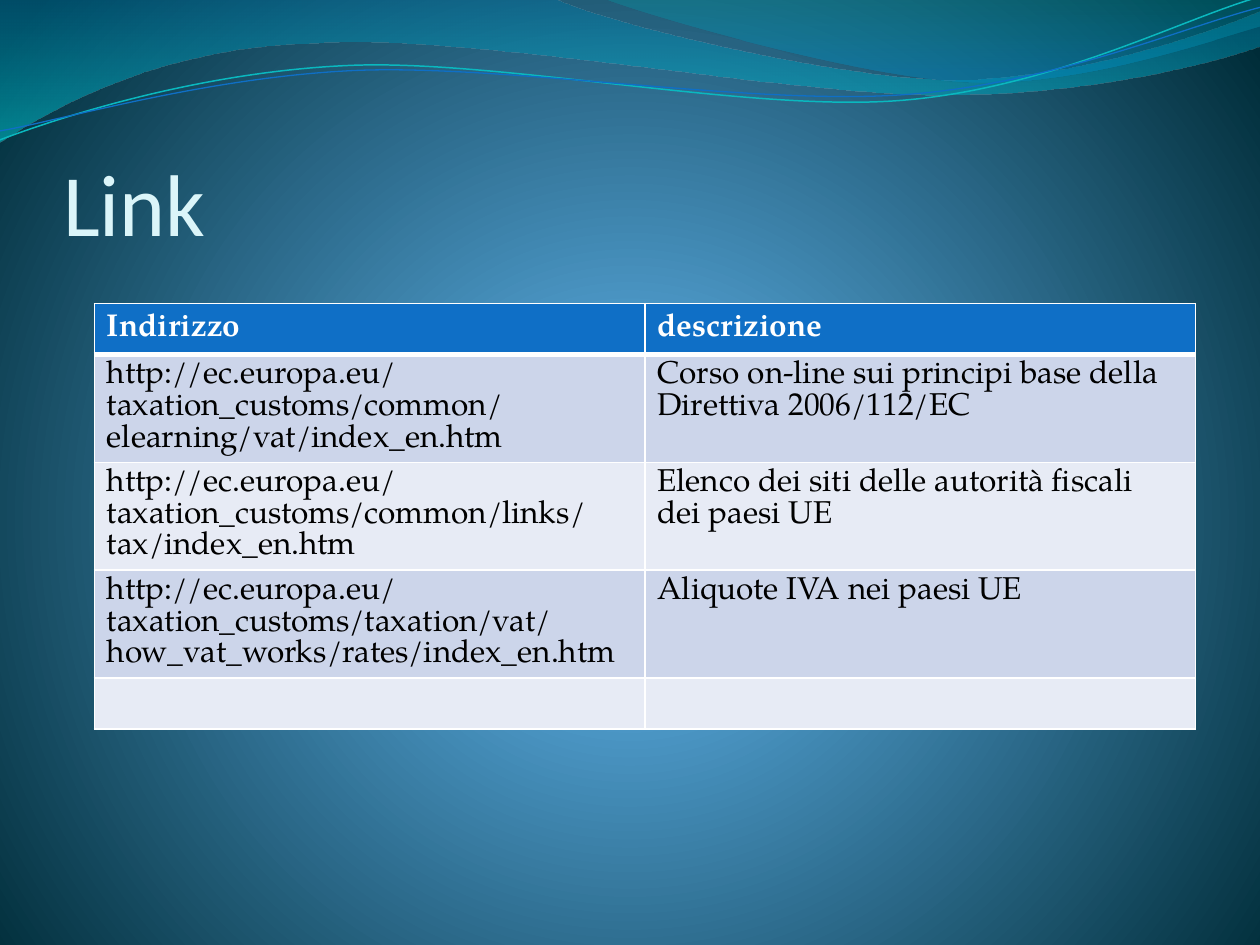
from lxml import etree
from pptx import Presentation, util as u
from pptx.dml.color import RGBColor
from pptx.enum import text
from pptx.oxml import parse_xml
from pptx.oxml.ns import nsdecls, qn

WHITE = RGBColor(0xFF, 0xFF, 0xFF)
BLACK = RGBColor(0, 0, 0)
PALE = RGBColor(0xDB, 0xF5, 0xF9)
BLUE = RGBColor(0x0F, 0x6F, 0xC6)
TEAL = RGBColor(0x0A, 0xB8, 0xBF)
BAND1 = RGBColor(0xCC, 0xD5, 0xEA)
BAND2 = RGBColor(0xE7, 0xEB, 0xF5)
SKY = RGBColor(0x4A, 0xA0, 0xD6)
MID = RGBColor(0x4C, 0x98, 0xC7)
NIGHT = RGBColor(0x00, 0x2C, 0x38)
WAVE_BLUE = RGBColor(0x00, 0x74, 0xA1)
WAVE_CYAN = RGBColor(0x00, 0xC6, 0xCF)
WAVE_GREEN = RGBColor(0x00, 0xA1, 0xA9)
WAVE_AZURE = RGBColor(0x00, 0x8B, 0xBF)


def gradient(stops, shade):
    gs = "".join(
        f'<a:gs pos="{pos * 1000}"><a:srgbClr val="{color}">'
        f'<a:alpha val="{alpha * 1000}"/></a:srgbClr></a:gs>'
        for pos, color, alpha in stops)
    return parse_xml(f'<a:gradFill {nsdecls("a")} rotWithShape="1">'
                     f'<a:gsLst>{gs}</a:gsLst>{shade}</a:gradFill>')


def curve(start, segments, close):
    fb = s.shapes.build_freeform(u.Cm(start[0]), u.Cm(start[1]))
    pts = [(u.Cm(seg[i]), u.Cm(seg[i + 1])) for seg in segments for i in range(0, len(seg), 2)]
    fb.add_line_segments(pts, close=close)
    sp = fb.convert_to_shape()
    sp.shadow.inherit = False
    steps = iter(list(sp._element.iter(qn("a:lnTo"))))
    for seg in segments:
        first = next(steps)
        if len(seg) == 6:
            bez = etree.Element(qn("a:cubicBezTo"))
            first.addprevious(bez)
            for step in (first, next(steps), next(steps)):
                bez.append(step[0])
                step.getparent().remove(step)
    return sp


prs = Presentation()
prs.slide_width, prs.slide_height = u.Cm(25.4), u.Cm(19.05)
s = prs.slides.add_slide(prs.slide_layouts[5])

s.background.fill.gradient()
old = s.background._cSld.find(".//" + qn("a:gradFill"))
old.getparent().replace(old, gradient(
    [(0, SKY, 100), (25, MID, 100), (100, NIGHT, 100)],
    '<a:path path="circle"><a:fillToRect l="10000" t="110000" r="10000" b="100000"/></a:path>'))

waves = [
    ((0, 0),
     [(11.18, -0.03), (12.09, 0.43, 16.87, 1.6, 19.25, 1.6),
      (21.67, 1.6, 24.33, 0.66, 25.4, 0.23), (25.43, 0.91),
      (24.97, 1.12, 22.1, 1.93, 18.95, 1.91), (15.8, 1.91, 9.7, 0.71, 6.53, 0.86),
      (3.28, 0.91, 1.17, 2.11, -0.03, 2.87), (0, 0)],
     [(0, WAVE_BLUE, 45), (100, WAVE_CYAN, 55)]),
    ((12.17, -0.03),
     [(12.93, 0.28, 17.32, 1.57, 19.53, 1.65),
      (21.74, 1.75, 24.41, 0.81, 25.4, 0.53), (25.4, 0), (12.17, -0.03)],
     [(0, WAVE_GREEN, 30), (80, WAVE_AZURE, 45)]),
]
for start, segments, stops in waves:
    sp = curve(start, segments, True)
    sp.line.fill.background()
    sp.fill.gradient()
    old = sp._element.spPr.find(qn("a:gradFill"))
    sp._element.spPr.replace(old, gradient(stops, '<a:lin ang="5400000" scaled="1"/>'))

strands = [
    ((0, 2.82),
     [(1.22, 2.36, 4.01, 1.45, 7.04, 1.32), (10.03, 1.19, 15.06, 2.26, 18.11, 2.03),
      (21.16, 1.8, 23.83, 0.38, 25.35, -0.05)], TEAL, 0.85),
    ((0, 2.64),
     [(1.19, 2.44, 4.17, 1.55, 7.19, 1.42), (10.24, 1.3, 15.16, 2.13, 18.21, 1.91),
      (21.23, 1.7, 23.9, 0.53, 25.4, 0.15)], BLUE, 0.75),
]
for start, segments, color, width in strands:
    sp = curve(start, segments, False)
    sp.fill.background()
    sp.line.color.rgb = color
    sp.line.width = u.Pt(width)

title = s.shapes.title
title.left, title.top, title.width, title.height = u.Cm(1.27), u.Cm(1.95), u.Cm(22.86), u.Cm(3.17)
tf = title.text_frame
tf.text = "Link"
tf.vertical_anchor = text.MSO_ANCHOR.BOTTOM
tf.margin_left = tf.margin_right = tf.margin_bottom = 0
tf.margin_top = u.Cm(0.13)
p = tf.paragraphs[0]
p.alignment = text.PP_ALIGN.LEFT
f = p.runs[0].font
f.name, f.size, f.color.rgb = "Calibri", u.Pt(50), PALE

rows = [
    ("Indirizzo", "descrizione"),
    ("http://ec.europa.eu/taxation_customs/common/elearning/vat/index_en.htm",
     "Corso on-line sui principi base della Direttiva 2006/112/EC"),
    ("http://ec.europa.eu/taxation_customs/common/links/tax/index_en.htm",
     "Elenco dei siti delle autorità fiscali dei paesi UE"),
    ("http://ec.europa.eu/taxation_customs/taxation/vat/how_vat_works/rates/index_en.htm",
     "Aliquote IVA nei paesi UE"),
    ("", ""),
]
tbl = s.shapes.add_table(len(rows), 2, u.Cm(1.9), u.Cm(6.12),
                         u.Cm(22.2), u.Cm(1.03 * len(rows))).table
for i, row in enumerate(rows):
    for j, value in enumerate(row):
        cell = tbl.cell(i, j)
        tcPr = cell._tc.get_or_add_tcPr()
        for side in "LRTB":
            thick = (i, side) in ((0, "B"), (1, "T"))
            ln = etree.SubElement(tcPr, qn(f"a:ln{side}"), w=str(u.Pt(3 if thick else 1)))
            fill = etree.SubElement(ln, qn("a:solidFill"))
            etree.SubElement(fill, qn("a:srgbClr"), val=str(WHITE))
        cell.fill.solid()
        cell.fill.fore_color.rgb = BLUE if i == 0 else BAND1 if i % 2 else BAND2
        if i == 0:
            cell.vertical_anchor = text.MSO_ANCHOR.MIDDLE
        if value:
            p = cell.text_frame.paragraphs[0]
            p.text = value
            p.line_spacing = u.Pt(18.1)
            f = p.runs[0].font
            f.name, f.size, f.bold = "TeX Gyre Pagella", u.Pt(18), i == 0
            f.color.rgb = BLACK if i else WHITE

prs.save("out.pptx")
